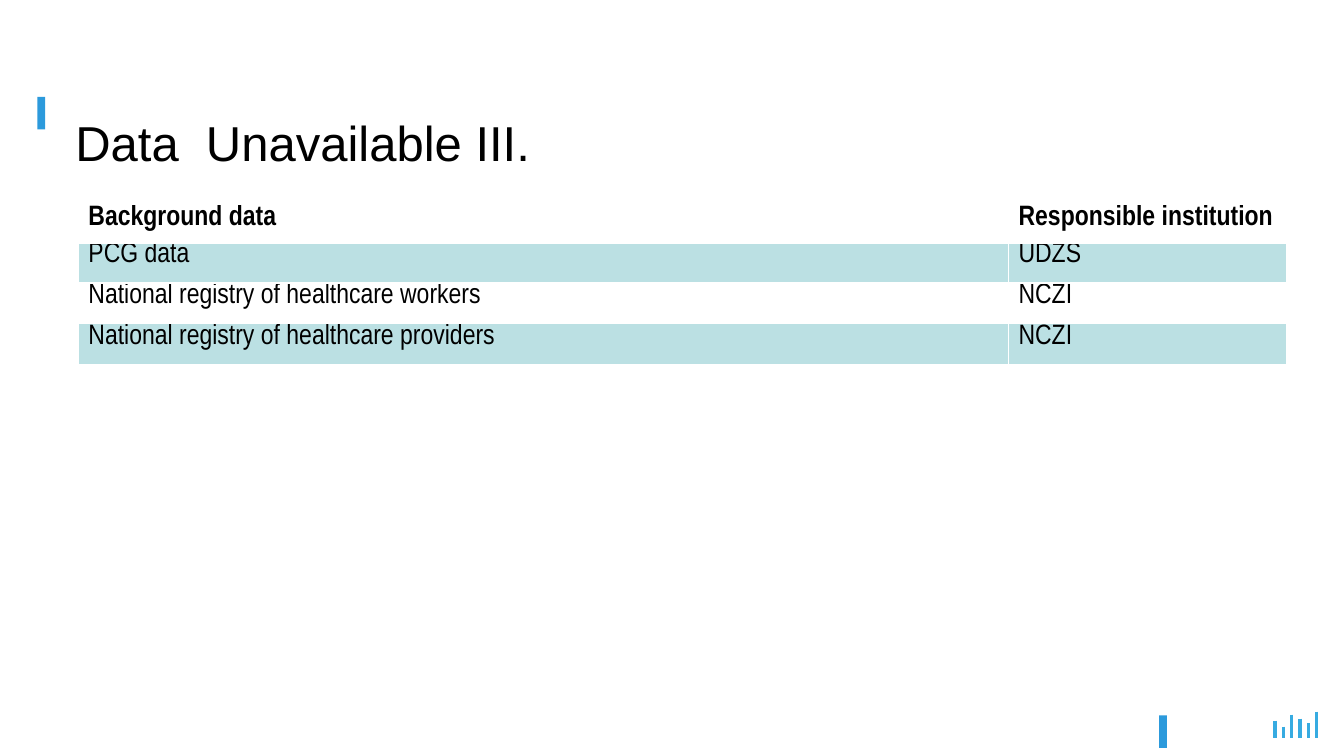
from lxml import etree
from pptx import Presentation
from pptx.dml.color import RGBColor
from pptx.enum.shapes import MSO_CONNECTOR, MSO_SHAPE
from pptx.enum.text import MSO_ANCHOR
from pptx.oxml.ns import qn
from pptx.util import Cm, Pt

STRAIGHT = MSO_CONNECTOR.STRAIGHT
RECTANGLE = MSO_SHAPE.RECTANGLE
TOP = MSO_ANCHOR.TOP
MIDDLE = MSO_ANCHOR.MIDDLE

THEME = {
    "text": RGBColor(0x00, 0x00, 0x00),
    "white": RGBColor(0xFF, 0xFF, 0xFF),
    "band": RGBColor(0xBB, 0xE0, 0xE3),
    "marker": RGBColor(0x2C, 0x9A, 0xDC),
    "bars": RGBColor(0x37, 0xAB, 0xE1),
    "title_font": "Arial",
    "table_font": "Arial Narrow",
    "title_size": Pt(35),
    "table_size": Pt(20),
}


def style_text(paragraph, name, size, bold=False):
    font = paragraph.font
    for attribute, value in {"name": name, "size": size, "bold": bold}.items():
        setattr(font, attribute, value)
    font.color.rgb = THEME["text"]


def add_border(cell, position, side, width):
    border = etree.Element(qn(f"a:{side}"), w=str(Pt(width)))
    fill = etree.SubElement(border, qn("a:solidFill"))
    etree.SubElement(fill, qn("a:srgbClr"), val=str(THEME["white"]))
    cell._tc.get_or_add_tcPr().insert(position, border)


presentation = Presentation()
presentation.slide_width = Cm(33.87)
presentation.slide_height = Cm(19.05)
slide = presentation.slides.add_slide(presentation.slide_layouts[6])

bars_left, bars_bottom, bar_step = 32.13, 18.59, 0.21
for index, bar_height in enumerate([0.43, 0.28, 0.58, 0.48, 0.36, 0.66]):
    x = Cm(bars_left + index * bar_step)
    bar = slide.shapes.add_connector(
        STRAIGHT, x, Cm(bars_bottom - bar_height), x, Cm(bars_bottom)
    )
    bar.line.color.rgb = THEME["bars"]
    bar.line.width = Pt(2.5)
    etree.SubElement(bar._element.spPr, qn("a:effectLst"))

for left, top in [(29.21, 18.03), (0.94, 2.44)]:
    marker = slide.shapes.add_shape(RECTANGLE, Cm(left), Cm(top), Cm(0.2), Cm(0.82))
    marker.shadow.inherit = False
    marker.fill.solid()
    marker.fill.fore_color.rgb = THEME["marker"]
    marker.line.fill.background()

title = slide.shapes.add_textbox(Cm(1.65), Cm(2.46), Cm(30.48), Cm(2.21))
title_frame = title.text_frame
title_frame.word_wrap = True
title_frame.vertical_anchor = MIDDLE
title_paragraph = title_frame.paragraphs[0]
title_paragraph.text = "Data  Unavailable III."
style_text(title_paragraph, THEME["title_font"], THEME["title_size"])

rows = [
    ("Background data", "Responsible institution"),
    ("PCG data", "UDZS"),
    ("National registry of healthcare workers", "NCZI"),
    ("National registry of healthcare providers", "NCZI"),
]
header_height, row_height = 0.94, 1.03
column_widths = [23.44, 7.01]
table = slide.shapes.add_table(
    len(rows),
    len(column_widths),
    Cm(1.98),
    Cm(5.16),
    Cm(sum(column_widths)),
    Cm(header_height + row_height * (len(rows) - 1)),
).table
for column, width in zip(table.columns, column_widths):
    column.width = Cm(width)

cell_format = {
    "margin_left": Cm(0.25),
    "margin_right": Cm(0.25),
    "margin_top": Cm(0),
    "margin_bottom": Cm(0),
    "vertical_anchor": TOP,
}
for row_index, row in enumerate(rows):
    is_header = row_index == 0
    table.rows[row_index].height = Cm(header_height if is_header else row_height)
    for column_index, text in enumerate(row):
        cell = table.cell(row_index, column_index)
        for attribute, value in cell_format.items():
            setattr(cell, attribute, value)
        cell.fill.solid()
        cell.fill.fore_color.rgb = THEME["band" if row_index % 2 else "white"]
        border_widths = {
            "lnL": 1,
            "lnR": 1,
            "lnT": 3 if row_index == 1 else 1,
            "lnB": 3 if is_header else 1,
        }
        for position, (side, width) in enumerate(border_widths.items()):
            add_border(cell, position, side, width)
        paragraph = cell.text_frame.paragraphs[0]
        paragraph.text = text
        style_text(paragraph, THEME["table_font"], THEME["table_size"], is_header)

presentation.save("out.pptx")
